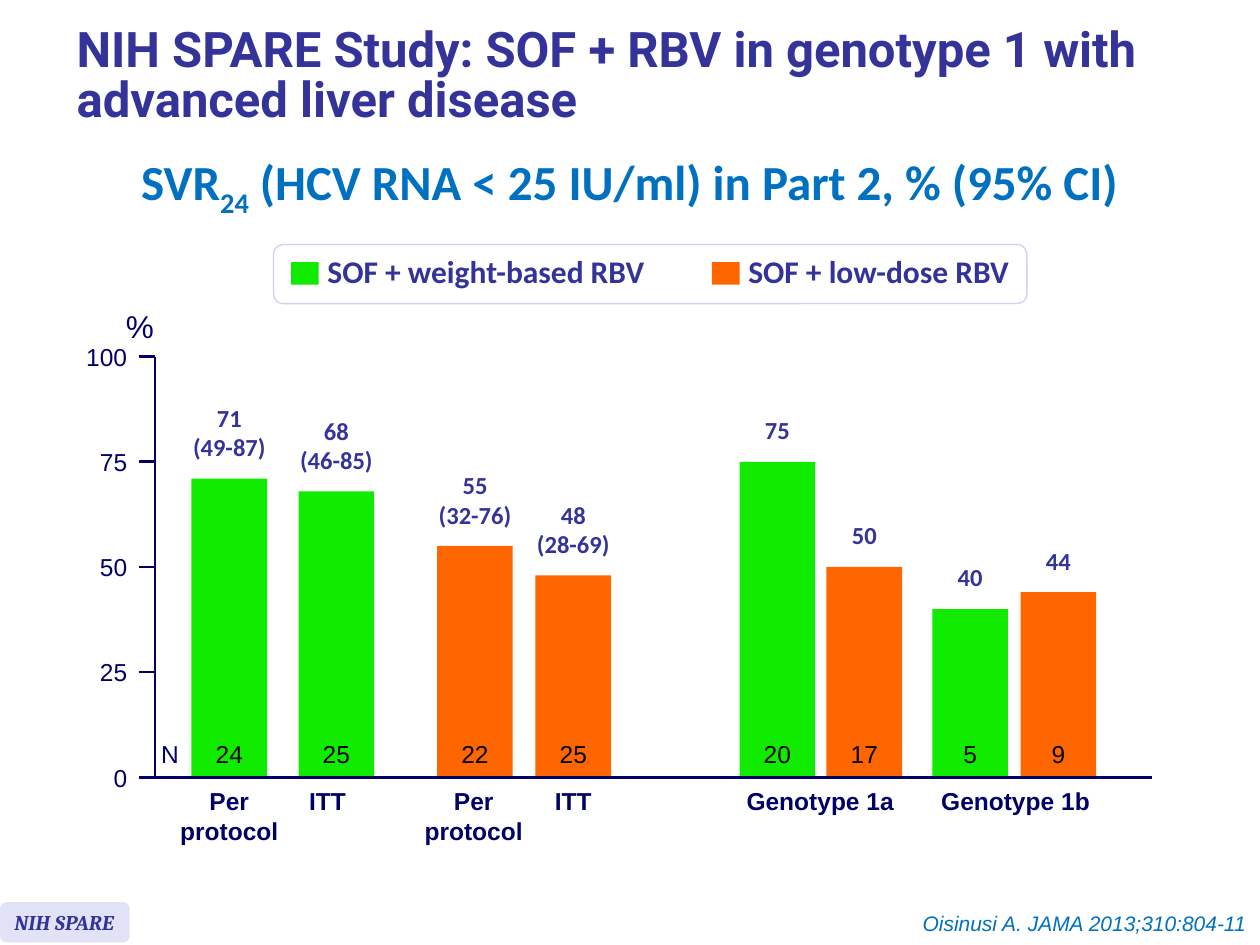
import pptx
import pptx.util
import pptx.dml.color
import pptx.enum.shapes
import pptx.enum.text
import pptx.oxml.ns
import lxml.etree

PX = 9144  # EMU per px, 100 px to the inch
COLORS = {
    "white": "FFFFFF", "black": "000000", "indigo": "333399", "navy": "000066",
    "blue": "0070C0", "lilac": "E2E2F6", "border": "D0D0F0",
    "weight": "10EB00", "low": "FF6600",
}
SHAPES = pptx.enum.shapes.MSO_SHAPE
ALIGN = pptx.enum.text.PP_ALIGN
ANCHOR = pptx.enum.text.MSO_ANCHOR
FIT = pptx.enum.text.MSO_AUTO_SIZE


def emu(*lengths):
    return [round(length * PX) for length in lengths]


def rgb(name):
    return pptx.dml.color.RGBColor.from_string(COLORS[name])


def write(frame, text, size, font, color, bold=False, italic=False,
          align=ALIGN.LEFT, wrap=False):
    frame.word_wrap = wrap
    for index, line in enumerate(text.split("\n")):
        paragraph = frame.add_paragraph() if index else frame.paragraphs[0]
        paragraph.add_run().text = line
        paragraph.alignment = align
        paragraph.font.size = pptx.util.Pt(size)
        paragraph.font.name = font
        paragraph.font.bold = bold
        paragraph.font.italic = italic
        paragraph.font.color.rgb = rgb(color)


def add_text(slide, box, text, size, font, color, insets=(10, 5),
             anchor=ANCHOR.TOP, grow=True, **style):
    frame = slide.shapes.add_textbox(*emu(*box)).text_frame
    frame.margin_left = frame.margin_right = insets[0] * PX
    frame.margin_top = frame.margin_bottom = insets[1] * PX
    frame.vertical_anchor = anchor
    write(frame, text, size, font, color, **style)
    frame.auto_size = FIT.SHAPE_TO_FIT_TEXT if grow else FIT.NONE
    return frame


def add_block(slide, box, fill, preset=SHAPES.RECTANGLE, border=None):
    block = slide.shapes.add_shape(preset, *emu(*box))
    block.shadow.inherit = False
    block.fill.solid()
    block.fill.fore_color.rgb = rgb(fill)
    if border:
        block.line.color.rgb = rgb(border)
        block.line.width = pptx.util.Pt(0.75)
    else:
        block.line.fill.background()
    return block


def add_axis_line(slide, x1, y1, x2, y2):
    line = slide.shapes.add_connector(
        pptx.enum.shapes.MSO_CONNECTOR.STRAIGHT, *emu(x1, y1, x2, y2))
    line.line.color.rgb = rgb("navy")
    line.line.width = pptx.util.Pt(1.5)
    properties = line._element.spPr
    lxml.etree.SubElement(properties, pptx.oxml.ns.qn("a:effectLst"))


def add_headings(slide, left, top):
    title = add_text(
        slide, (left, top, 913, 107),
        "NIH SPARE Study: SOF + RBV in genotype 1 with advanced liver disease",
        28, "Roboto", "indigo", bold=True, wrap=True, grow=False,
        anchor=ANCHOR.MIDDLE)
    title.paragraphs[0].line_spacing = 0.85

    endpoint = add_text(slide, (left + 34, top + 128, 829, 46), "SVR", 28,
                        "Calibri", "blue", bold=True, align=ALIGN.CENTER)
    paragraph = endpoint.paragraphs[0]
    paragraph.line_spacing = pptx.util.Pt(23.6)
    subscript = paragraph.add_run()
    subscript.text = "24"
    subscript.font._element.set("baseline", "-25000")
    paragraph.add_run().text = " (HCV RNA < 25 IU/ml) in Part 2, % (95% CI)"


def add_legend(slide, left, top):
    add_block(slide, (left, top, 598, 47), "white",
              SHAPES.ROUNDED_RECTANGLE, "border")
    entries = [(14, "weight", "SOF + weight-based RBV", 275),
               (348, "low", "SOF + low-dose RBV", 229)]
    for offset, arm, name, width in entries:
        add_block(slide, (left + offset, top + 14, 22, 18), arm)
        add_text(slide, (left + offset + 19, top + 1, width, 40), name, 18,
                 "Calibri", "indigo", bold=True)


def add_bar_chart(slide, left, top, width, height):
    """Draw the axes and bars; the box spans 0 to 100 % and includes the ticks."""
    base = top + height
    axis = left + 13
    bars = [  # centre from left, arm, SVR24 in %, confidence interval, N
        (72, "weight", 71, "(49-87)", 24), (157, "weight", 68, "(46-85)", 25),
        (267, "low", 55, "(32-76)", 22), (345, "low", 48, "(28-69)", 25),
        (507, "weight", 75, "", 20), (576, "low", 50, "", 17),
        (660, "weight", 40, "", 5), (730, "low", 44, "", 9),
    ]
    categories = [
        (72, "Per\nprotocol", 98), (150, "ITT", 49), (266, "Per\nprotocol", 98),
        (345, "ITT", 49), (541, "Genotype 1a", 138), (696, "Genotype 1b", 138),
    ]

    for center, arm, rate, interval, patients in bars:
        middle = left + center
        bar_top = base - height * rate / 100
        add_block(slide, (middle - 30, bar_top, 60, base - bar_top), arm)
        label = f"{rate}\n{interval}" if interval else str(rate)
        label_width, label_height = (78, 67) if interval else (40, 44)
        add_text(slide, (middle - label_width / 2, bar_top - label_height - 3,
                         label_width, label_height),
                 label, 14, "Calibri", "indigo", insets=(10, 10), bold=True,
                 align=ALIGN.CENTER)
        add_text(slide, (middle - 21, base - 35, 42, 34), str(patients), 14,
                 "Arial", "black", align=ALIGN.CENTER)

    for center, category, label_width in categories:
        add_text(slide, (left + center - label_width / 2, base + 2, label_width,
                         57 if "\n" in category else 34),
                 category, 14, "Arial", "navy", bold=True, align=ALIGN.CENTER)

    for tick in range(0, 101, 25):
        y = base - height * tick / 100
        label_width = 11 * len(str(tick))
        add_text(slide, (left - 9 - label_width, y - 12, label_width, 24),
                 str(tick), 14, "Arial", "navy", insets=(0, 0),
                 anchor=ANCHOR.MIDDLE, align=ALIGN.RIGHT)
        add_axis_line(slide, left, y, axis if tick else left + width, y)
    add_axis_line(slide, axis, top, axis, base)
    add_text(slide, (left - 20, top - 44, 54, 44), "%", 18, "Arial", "navy")
    add_text(slide, (left + 8, base - 35, 34, 34), "N", 14, "Arial", "navy")


def add_footer(slide, top):
    study = add_block(slide, (0, top, 103, 32), "lilac",
                      SHAPES.ROUNDED_RECTANGLE)
    study.text_frame.vertical_anchor = ANCHOR.MIDDLE
    write(study.text_frame, "NIH SPARE", 12, "Cambria", "indigo", bold=True,
          italic=True)
    add_text(slide, (711, top + 2, 288, 30), "Oisinusi A. JAMA 2013;310:804-11",
             12, "Arial", "blue", italic=True, align=ALIGN.RIGHT)


def main():
    presentation = pptx.Presentation()
    presentation.slide_width, presentation.slide_height = emu(1000, 750)
    slide = presentation.slides.add_slide(presentation.slide_layouts[6])
    add_headings(slide, 51, 8)
    add_legend(slide, 217, 194)
    add_bar_chart(slide, 110, 283, 804, 334)
    add_footer(slide, 716)
    presentation.save("out.pptx")


if __name__ == "__main__":
    main()
